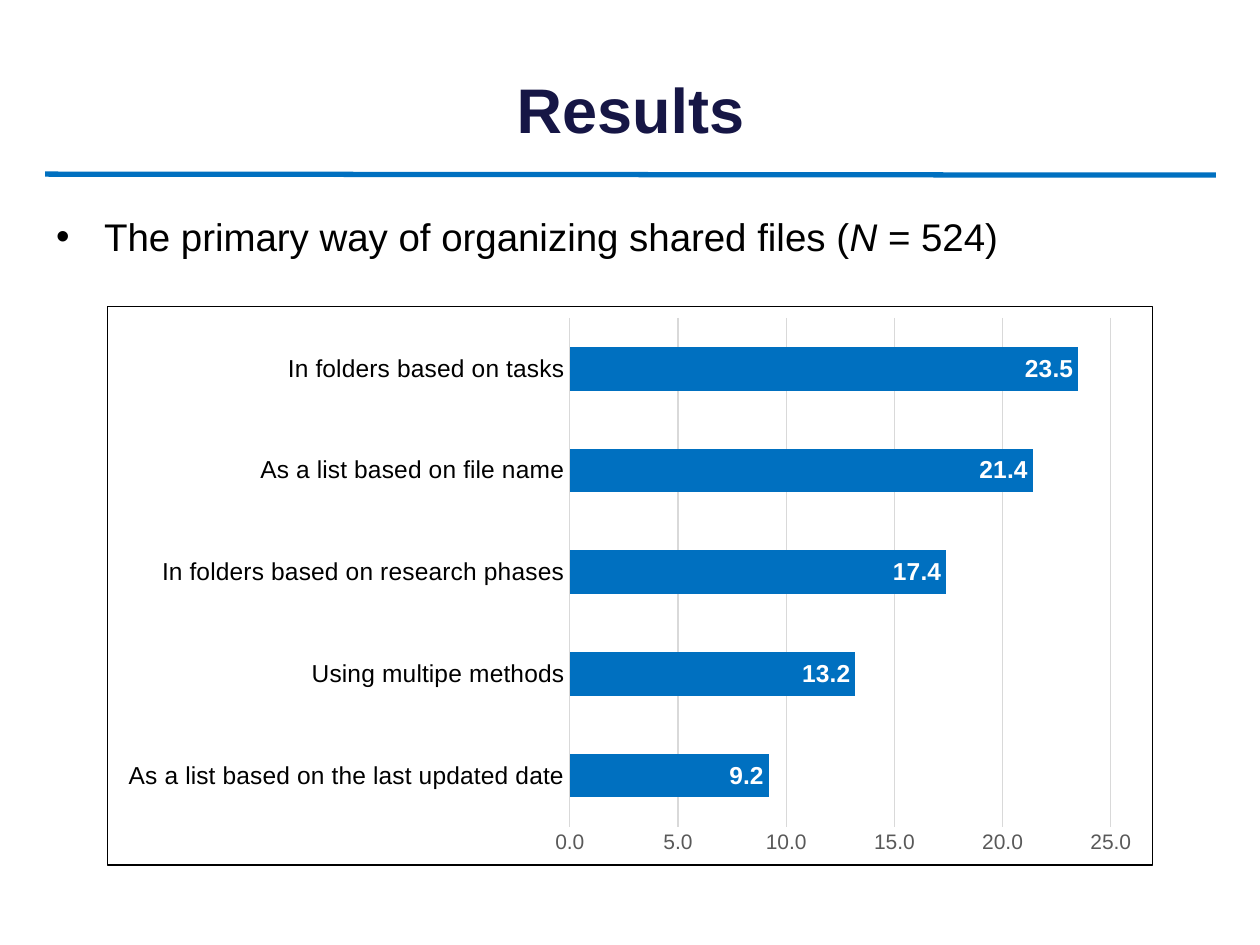
import lxml.etree
import pptx
import pptx.chart.data
import pptx.dml.color
import pptx.enum.chart
import pptx.enum.shapes
import pptx.enum.text
import pptx.oxml
import pptx.oxml.ns
import pptx.util

Cm = pptx.util.Cm
Pt = pptx.util.Pt
RGBColor = pptx.dml.color.RGBColor

NAVY = RGBColor(0x16, 0x16, 0x45)
BLUE = RGBColor(0x00, 0x70, 0xC0)
BLACK = RGBColor(0x00, 0x00, 0x00)
WHITE = RGBColor(0xFF, 0xFF, 0xFF)
GRAY = RGBColor(0x59, 0x59, 0x59)
LIGHT_GRAY = RGBColor(0xD9, 0xD9, 0xD9)
FONT_NAME = "Arial"

FILE_ORGANIZATION = {
    "As a list based on the last updated date": 9.2,
    "Using multipe methods": 13.2,
    "In folders based on research phases": 17.4,
    "As a list based on file name": 21.4,
    "In folders based on tasks": 23.5,
}


def style_font(font, size, color, bold=False):
    font.name = FONT_NAME
    font.size = Pt(size)
    font.color.rgb = color
    font.bold = bold


def style_line(line, color, width):
    line.color.rgb = color
    line.width = Pt(width)


def add_text_frame(slide, left, top, width, height):
    text_frame = slide.shapes.add_textbox(left, top, width, height).text_frame
    text_frame.word_wrap = True
    return text_frame


def add_title(slide, text):
    text_frame = add_text_frame(slide, Cm(0.91), Cm(0.89), Cm(23.6), Cm(2.57))
    text_frame.vertical_anchor = pptx.enum.text.MSO_ANCHOR.MIDDLE
    text_frame.text = text
    paragraph = text_frame.paragraphs[0]
    paragraph.alignment = pptx.enum.text.PP_ALIGN.CENTER
    style_font(paragraph.runs[0].font, 36, NAVY, bold=True)


def add_rule(slide):
    connector = slide.shapes.add_connector(
        pptx.enum.shapes.MSO_CONNECTOR.STRAIGHT, Cm(0.91), Cm(3.51), Cm(24.51), Cm(3.53)
    )
    style_line(connector.line, BLUE, 3)
    properties = connector._element.spPr
    lxml.etree.SubElement(properties, pptx.oxml.ns.qn("a:effectLst"))


def add_bullet(slide, pieces):
    text_frame = add_text_frame(slide, Cm(0.58), Cm(4.17), Cm(24.26), Cm(13.03))
    paragraph = text_frame.paragraphs[0]
    paragraph.space_before = Pt(3.6)
    for text, italic in pieces:
        run = paragraph.add_run()
        run.text = text
        style_font(run.font, 22, BLACK)
        run.font.italic = italic
    properties = paragraph._p.get_or_add_pPr()
    properties.set("marL", str(Cm(1.27)))
    properties.set("indent", str(-Cm(0.97)))
    font = lxml.etree.SubElement(properties, pptx.oxml.ns.qn("a:buFont"))
    font.set("typeface", FONT_NAME)
    bullet = lxml.etree.SubElement(properties, pptx.oxml.ns.qn("a:buChar"))
    bullet.set("char", "•")


def add_chart_border(chart, color, width):
    border = pptx.oxml.parse_xml(
        f'<c:spPr {pptx.oxml.ns.nsdecls("c", "a")}><a:noFill/>'
        f'<a:ln w="{Pt(width)}"><a:solidFill><a:srgbClr val="{color}"/></a:solidFill></a:ln>'
        "</c:spPr>"
    )
    chart._chartSpace.find(pptx.oxml.ns.qn("c:chart")).addnext(border)


def style_axes(chart):
    category_axis, value_axis = chart.category_axis, chart.value_axis
    for axis, size, color in ((category_axis, 14, BLACK), (value_axis, 12, GRAY)):
        axis.major_tick_mark = pptx.enum.chart.XL_TICK_MARK.NONE
        axis.minor_tick_mark = pptx.enum.chart.XL_TICK_MARK.NONE
        style_font(axis.tick_labels.font, size, color)
    style_line(category_axis.format.line, LIGHT_GRAY, 0.75)
    value_axis.format.line.fill.background()
    value_axis.minimum_scale = 0
    value_axis.maximum_scale = 25
    value_axis.major_unit = 5
    value_axis.has_major_gridlines = True
    style_line(value_axis.major_gridlines.format.line, LIGHT_GRAY, 0.75)
    value_axis.tick_labels.number_format = "0.0"
    value_axis.tick_labels.number_format_is_linked = False


def style_bars(plot):
    plot.gap_width = 133
    plot.vary_by_categories = False
    series = plot.series[0]
    series.format.fill.solid()
    series.format.fill.fore_color.rgb = BLUE
    labels = series.data_labels
    labels.show_value = True
    labels.position = pptx.enum.chart.XL_LABEL_POSITION.INSIDE_END
    labels.number_format = "0.0"
    labels.number_format_is_linked = False
    style_font(labels.font, 14, WHITE, bold=True)


def add_bar_chart(slide, values_by_category):
    chart_data = pptx.chart.data.CategoryChartData(number_format="0.0")
    chart_data.categories = list(values_by_category)
    chart_data.add_series("Series 1", list(values_by_category.values()))
    chart = slide.shapes.add_chart(
        pptx.enum.chart.XL_CHART_TYPE.BAR_CLUSTERED,
        Cm(2.16), Cm(6.17), Cm(21.08), Cm(11.28), chart_data,
    ).chart
    chart.has_title = False
    chart.has_legend = False
    style_font(chart.font, 10, BLACK)
    style_axes(chart)
    style_bars(chart.plots[0])
    add_chart_border(chart, BLACK, 0.75)


def main():
    presentation = pptx.Presentation()
    presentation.slide_width = Cm(25.4)
    presentation.slide_height = Cm(19.05)
    slide = presentation.slides.add_slide(presentation.slide_layouts[6])
    add_title(slide, "Results")
    add_rule(slide)
    add_bullet(slide, [
        ("The primary way of organizing shared files (", False),
        ("N ", True),
        ("= 524)", False),
    ])
    add_bar_chart(slide, FILE_ORGANIZATION)
    presentation.save("out.pptx")


if __name__ == "__main__":
    main()
